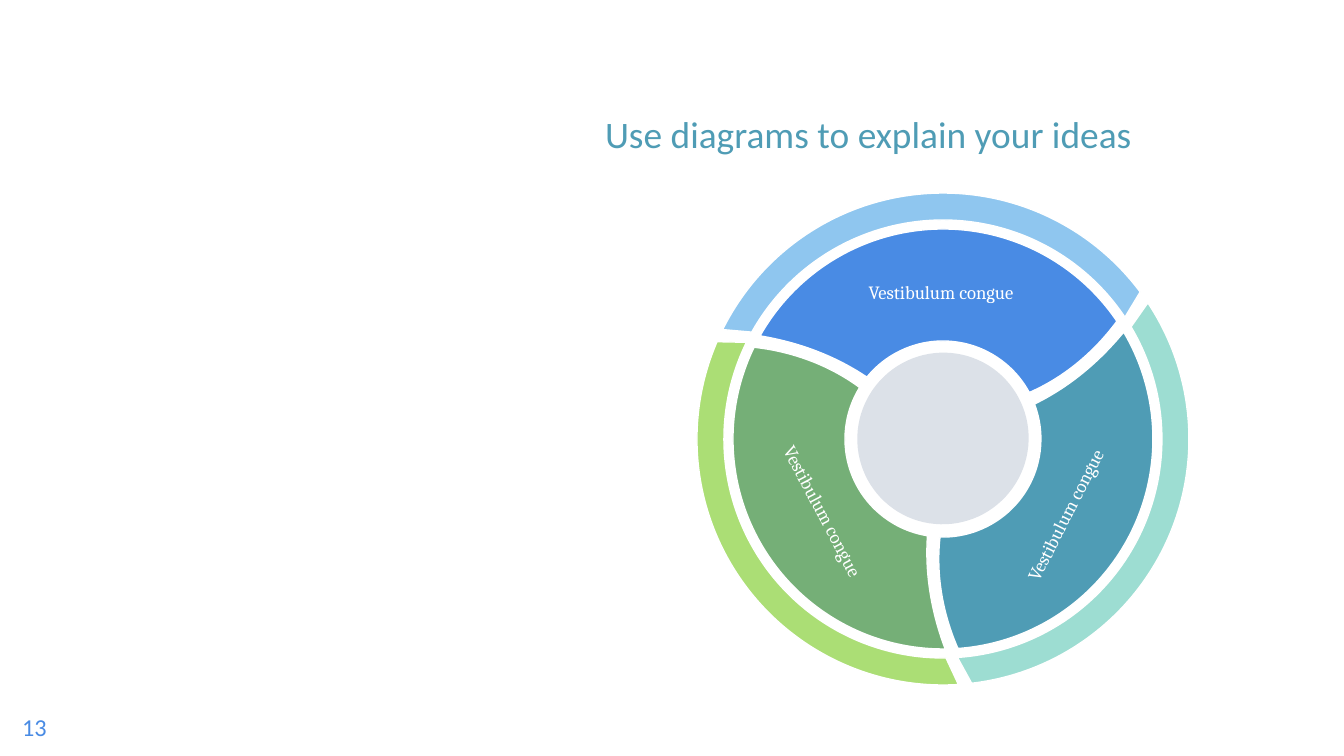
import math

from lxml import etree
from pptx import Presentation
from pptx import util as u
from pptx.dml.color import RGBColor
from pptx.enum import shapes, text
from pptx.oxml.ns import qn

PX = 914400 / 134.4
COLORS = {
    "blue": "498BE4", "sky": "8FC6EF", "teal": "4F9CB5", "mint": "9DDDD2",
    "green": "75AF77", "lime": "ABDE75", "grey": "DCE1E8", "white": "FFFFFF",
}
TITLE = "Use diagrams to explain your ideas"
PAGE = "13"
# label, turn of the sector, wedge colour, rim colour, label centre, label rotation
SECTORS = [
    ("Vestibulum congue ", 120, "teal", "mint", (1066, 513), 297),
    ("Vestibulum congue ", 0, "blue", "sky", (943, 292), 0),
    ("Vestibulum congue ", 240, "green", "lime", (824, 513), 62.1),
]
CENTER = (943, 439)
WHEEL_ROTATION = 305.3
HUB = (857, 353, 172, 171)
WEDGE_R = (98, 210)
RIM_R = (219, 246)
LABEL_SIZE = (204, 73)


def px(n):
    return u.Emu(round(n * PX))


def rgb(name):
    return RGBColor.from_string(COLORS[name])


def polar(r, deg):
    a = math.radians(deg)
    return r * math.cos(a), r * math.sin(a)


def turned(point, deg):
    c, s = polar(1, deg)
    return point[0] * c - point[1] * s, point[0] * s + point[1] * c


def arc(r, start, end):
    """Two cubic curves along a circle."""
    step = (end - start) / 2
    k = r * 4 / 3 * math.tan(math.radians(step) / 4)
    quarter = [(r, 0), (r, k), turned((r, -k), step), turned((r, 0), step)]
    return [[turned(p, start + i * step) for p in quarter] for i in (0, 1)]


def straight(a, b):
    return [a, a, b, b]


def extent(curves, axis):
    """Lowest and highest coordinate that the curves reach."""
    values = []
    for a, b, c, d in ([p[axis] for p in curve] for curve in curves):
        for t in (i / 40 for i in range(41)):
            values.append(a * (1 - t) ** 3 + 3 * b * t * (1 - t) ** 2
                          + 3 * c * t * t * (1 - t) + d * t ** 3)
    return min(values), max(values)


def add_outline(parent, curves, turn, color):
    """Closed outline, given around the wheel's centre and turned by degrees."""
    curves = [[turned(p, turn - WHEEL_ROTATION) for p in curve] for curve in curves]
    (x0, x1), (y0, y1) = extent(curves, 0), extent(curves, 1)
    w, h = x1 - x0, y1 - y0
    mid = turned(((x0 + x1) / 2, (y0 + y1) / 2), WHEEL_ROTATION)
    left, top = CENTER[0] + mid[0] - w / 2, CENTER[1] + mid[1] - h / 2

    builder = parent.build_freeform(px(left), px(top), scale=1.0)
    builder.add_line_segments([(px(left + w), px(top)), (px(left + w), px(top + h)),
                               (px(left), px(top + h))])
    sp = builder.convert_to_shape()
    path = next(sp.element.iter(qn("a:path")))
    for child in list(path):
        path.remove(child)
    steps = [("a:moveTo", curves[0][:1])] + [("a:cubicBezTo", c[1:]) for c in curves]
    for tag, points in steps:
        step = etree.SubElement(path, qn(tag))
        for x, y in points:
            etree.SubElement(step, qn("a:pt"), x=str(px(x - x0)), y=str(px(y - y0)))
    etree.SubElement(path, qn("a:close"))

    sp.rotation = WHEEL_ROTATION
    sp.shadow.inherit = False
    sp.fill.solid()
    sp.fill.fore_color.rgb = rgb(color)
    sp.line.color.rgb = rgb("white")
    sp.line.width = u.Pt(0.75)


def write(sp, content, font, size, color, anchor, align, inset=0):
    tf = sp.text_frame
    tf.word_wrap = True
    tf.auto_size = text.MSO_AUTO_SIZE.NONE
    tf.vertical_anchor = anchor
    tf.margin_left = tf.margin_right = tf.margin_top = tf.margin_bottom = px(inset)
    p = tf.paragraphs[0]
    p.alignment = align
    r = p.add_run()
    r.text = content
    r.font.name, r.font.size = font, u.Pt(size)
    r.font.color.rgb = rgb(color)


prs = Presentation()
prs.slide_width, prs.slide_height = px(1344), px(756)
s = prs.slides.add_slide(prs.slide_layouts[5])

title = s.shapes.title
title.left, title.top, title.width, title.height = map(px, (605, 30, 672, 126))
write(title, TITLE, "Calibri", 20, "teal", text.MSO_ANCHOR.BOTTOM, text.PP_ALIGN.LEFT)

page = s.shapes.add_textbox(*map(px, (22, 698, 81, 58)))
write(page, PAGE, "Calibri", 13, "blue", text.MSO_ANCHOR.MIDDLE, text.PP_ALIGN.LEFT)

hub = s.shapes.add_shape(shapes.MSO_SHAPE.OVAL, *map(px, HUB))
hub.rotation = WHEEL_ROTATION
hub.shadow.inherit = False
hub.fill.solid()
hub.fill.fore_color.rgb = rgb("grey")
hub.line.fill.background()

rim_in, rim_out = arc(RIM_R[0], 209.2, 326.2), arc(RIM_R[1], 323.3, 206.4)
rim = (rim_in + [straight(rim_in[-1][-1], rim_out[0][0])]
       + rim_out + [straight(rim_out[-1][-1], rim_in[0][0])])
outer, inner = arc(WEDGE_R[1], 209.4, 325.9), arc(WEDGE_R[0], 331.7, 219.1)
wedge = (outer + [[outer[-1][-1], (152, -88), (122, -62), inner[0][0]]]
         + inner + [[inner[-1][-1], (-109, -84), (-146, -97), outer[0][0]]])

for label, turn, wedge_color, rim_color, (x, y), rotation in SECTORS:
    sector = s.shapes.add_group_shape().shapes
    add_outline(sector, rim, turn, rim_color)
    add_outline(sector, wedge, turn, wedge_color)
    w, h = LABEL_SIZE
    box = sector.add_textbox(*map(px, (x - w / 2, y - h / 2, w, h)))
    box.rotation = rotation
    write(box, label, "Cambria", 10, "white",
          text.MSO_ANCHOR.MIDDLE, text.PP_ALIGN.CENTER, inset=13)

prs.save("out.pptx")
